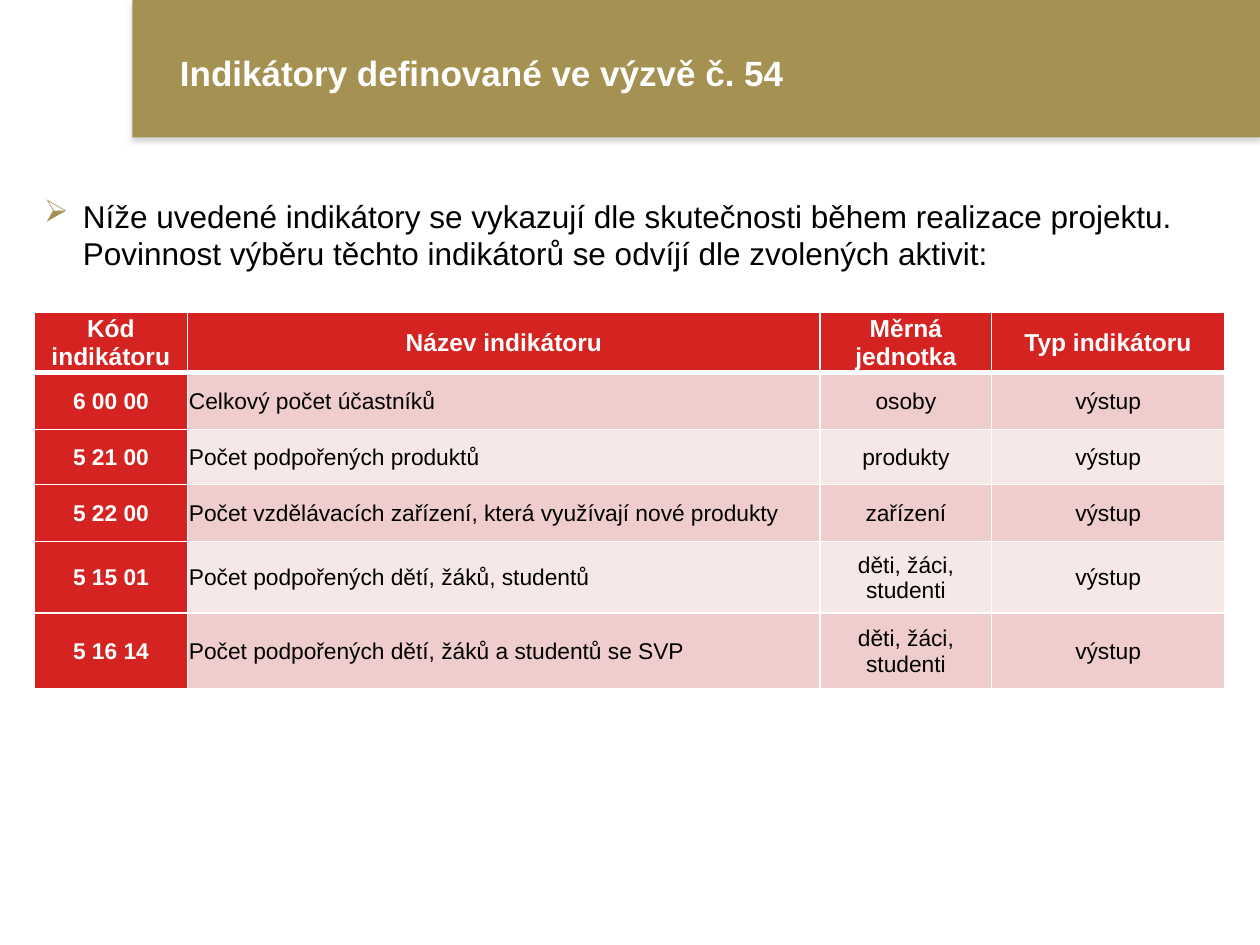
from lxml.etree import SubElement as Sub
from pptx import Presentation
from pptx.dml.color import RGBColor as RGB
from pptx.enum.shapes import MSO_SHAPE as Shape
from pptx.enum.text import MSO_ANCHOR as Anchor, PP_ALIGN as Align
from pptx.oxml.ns import qn
from pptx.util import Inches, Pt

GOLD = RGB(0xA5, 0x92, 0x53)
RED = RGB(0xD5, 0x23, 0x22)
ROSE = RGB(0xEF, 0xCD, 0xCD)
PALE = RGB(0xF7, 0xE8, 0xE8)
WHITE = RGB(0xFF, 0xFF, 0xFF)
BLACK = RGB(0, 0, 0)
GRAY = RGB(0x80, 0x80, 0x80)

COLS = [1.22, 5.02, 1.36, 1.85]
HEIGHTS = [0.4, 0.45, 0.44, 0.45, 0.57, 0.6]
ROWS = [
    ["Kód indikátoru", "Název indikátoru", "Měrná jednotka", "Typ indikátoru"],
    ["6 00 00", "Celkový počet účastníků", "osoby", "výstup"],
    ["5 21 00", "Počet podpořených produktů", "produkty", "výstup"],
    ["5 22 00", "Počet vzdělávacích zařízení, která využívají nové produkty",
     "zařízení", "výstup"],
    ["5 15 01", "Počet podpořených dětí, žáků, studentů",
     "děti, žáci, studenti", "výstup"],
    ["5 16 14", "Počet podpořených dětí, žáků a studentů se SVP",
     "děti, žáci, studenti", "výstup"],
]


def write(frame, text, size, color=BLACK, bold=False, align=Align.LEFT):
    para = frame.paragraphs[0]
    para.alignment = align
    run = para.add_run()
    run.text = text
    font = run.font
    font.name, font.size, font.bold = "Arial", Pt(size), bold
    font.color.rgb = color
    return para


def add_text(slide, box, text, anchor=Anchor.TOP, **style):
    frame = slide.shapes.add_textbox(*map(Inches, box)).text_frame
    frame.word_wrap = True
    frame.vertical_anchor = anchor
    return write(frame, text, **style)


def add_bullet(para, char, color, indent):
    """Hang the paragraph behind a coloured bullet."""
    props = para._p.get_or_add_pPr()
    props.set("marL", str(Inches(indent)))
    props.set("indent", str(-Inches(indent)))
    tint = Sub(props, qn("a:buClr"))
    Sub(tint, qn("a:srgbClr"), val=str(color))
    Sub(props, qn("a:buChar"), char=char)


def add_shadow(shape, color, alpha, blur, dist):
    """Drop a soft shadow straight down; blur and dist are in points."""
    shape.shadow.inherit = False
    effects = shape._element.spPr.find(qn("a:effectLst"))
    outer = Sub(effects, qn("a:outerShdw"), blurRad=str(Pt(blur)),
                dist=str(Pt(dist)), dir=str(90 * 60000), rotWithShape="0")
    tint = Sub(outer, qn("a:srgbClr"), val=str(color))
    Sub(tint, qn("a:alpha"), val=str(alpha * 1000))


def add_band(slide):
    band = slide.shapes.add_shape(
        Shape.RECTANGLE, *map(Inches, (1.05, 0, 8.95, 1.09)))
    band.fill.solid()
    band.fill.fore_color.rgb = GOLD
    band.line.fill.background()
    add_shadow(band, GRAY, 35, 3.1, 1.8)


def set_border(cell, side, width):
    props = cell._tc.get_or_add_tcPr()
    line = Sub(props, qn("a:ln" + side), w=str(Pt(width)))
    Sub(Sub(line, qn("a:solidFill")), qn("a:srgbClr"), val=str(WHITE))


def fill_cell(cell, text, row, col):
    head, key = row == 0, row == 0 or col == 0
    cell.margin_left = cell.margin_right = cell.margin_top = Inches(0.01)
    cell.margin_bottom = 0
    cell.vertical_anchor = Anchor.MIDDLE
    write(cell.text_frame, text, size=14 if head else 13,
          color=WHITE if key else BLACK, bold=key,
          align=Align.JUSTIFY if col == 1 and not head else Align.CENTER)
    for side in "LRTB":
        thick = (side, row) in (("B", 0), ("T", 1))
        set_border(cell, side, 3 if thick else 1)
    cell.fill.solid()
    cell.fill.fore_color.rgb = RED if key else ROSE if row % 2 else PALE


def add_grid(slide):
    table = slide.shapes.add_table(
        len(ROWS), len(COLS), Inches(0.27), Inches(2.48),
        Inches(sum(COLS)), Inches(sum(HEIGHTS))).table
    for col, width in zip(table.columns, COLS):
        col.width = Inches(width)
    for r, (texts, height) in enumerate(zip(ROWS, HEIGHTS)):
        table.rows[r].height = Inches(height)
        for c, text in enumerate(texts):
            fill_cell(table.cell(r, c), text, r, c)


def main():
    deck = Presentation()
    deck.slide_width, deck.slide_height = Inches(10), Inches(7.5)
    slide = deck.slides.add_slide(deck.slide_layouts[6])
    add_band(slide)
    add_text(slide, (1.33, 0.4, 8.17, 0.35),
             "Indikátory definované ve výzvě č. 54",
             anchor=Anchor.MIDDLE, size=20, color=WHITE, bold=True)
    intro = add_text(
        slide, (0.25, 1.2, 9.46, 1.01),
        "Níže uvedené indikátory se vykazují dle skutečnosti během realizace "
        "projektu. Povinnost výběru těchto indikátorů se odvíjí dle "
        "zvolených aktivit:", anchor=Anchor.BOTTOM, size=18)
    add_bullet(intro, "➢", GOLD, 0.31)
    add_grid(slide)
    deck.save("out.pptx")


if __name__ == "__main__":
    main()
